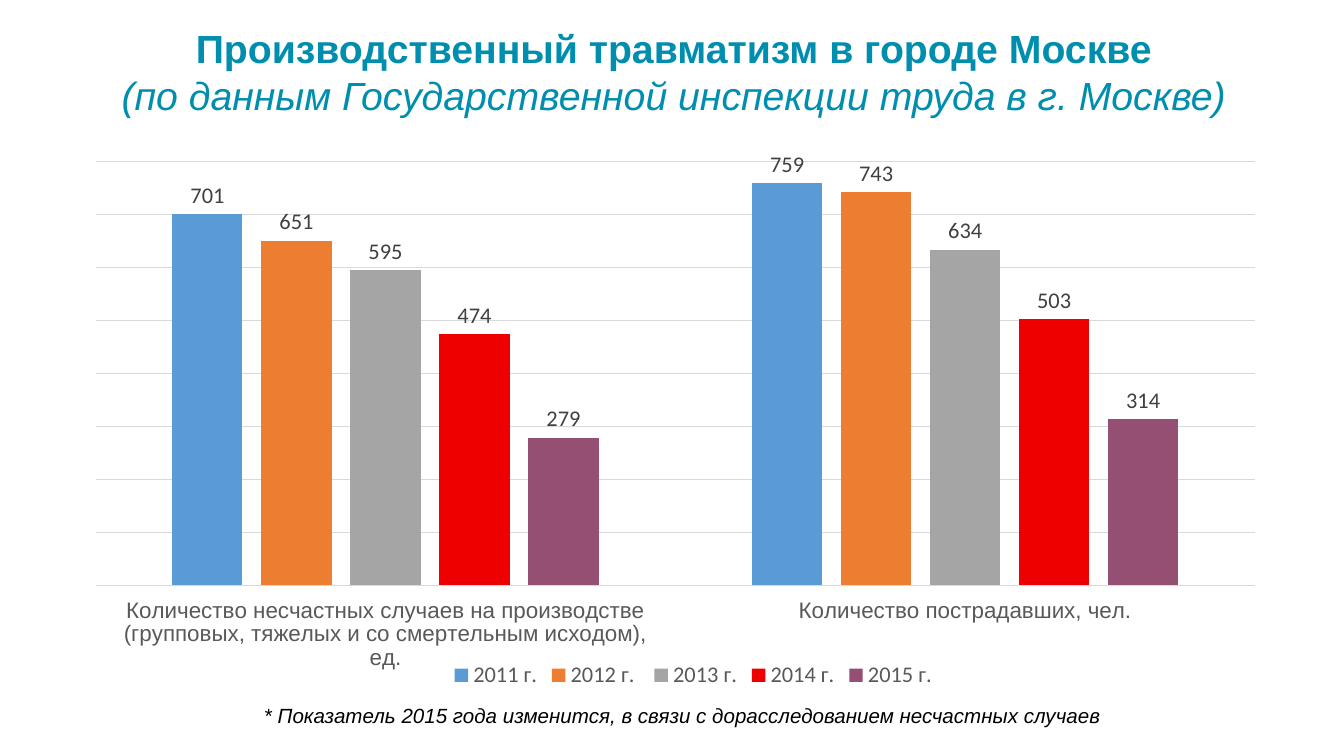
"""Build a slide on workplace injuries in Moscow, 2011 to 2015."""
from lxml import etree
from pptx import Presentation
from pptx.chart.data import CategoryChartData
from pptx.dml.color import RGBColor
from pptx.enum.chart import (XL_CHART_TYPE, XL_LABEL_POSITION, XL_LEGEND_POSITION,
                             XL_TICK_LABEL_POSITION, XL_TICK_MARK)
from pptx.enum.text import MSO_ANCHOR, MSO_AUTO_SIZE, PP_ALIGN
from pptx.oxml.ns import qn
from pptx.util import Pt

COLUMN = XL_CHART_TYPE.COLUMN_CLUSTERED
OUTSIDE = XL_LABEL_POSITION.OUTSIDE_END
BOTTOM = XL_LEGEND_POSITION.BOTTOM
LOW = XL_TICK_LABEL_POSITION.LOW
BLANK = XL_TICK_LABEL_POSITION.NONE
NO_TICK = XL_TICK_MARK.NONE
TOP = MSO_ANCHOR.TOP
NO_FIT = MSO_AUTO_SIZE.NONE
CENTER = PP_ALIGN.CENTER
LEFT = PP_ALIGN.LEFT

TEAL = RGBColor(0x00, 0x8E, 0xAF)
BLACK = RGBColor(0x00, 0x00, 0x00)
DARK = RGBColor(0x40, 0x40, 0x40)
GRAY = RGBColor(0x59, 0x59, 0x59)
PALE = RGBColor(0xD9, 0xD9, 0xD9)
BLUE = RGBColor(0x5B, 0x9B, 0xD5)
ORANGE = RGBColor(0xED, 0x7D, 0x31)
SILVER = RGBColor(0xA5, 0xA5, 0xA5)
RED = RGBColor(0xEE, 0x00, 0x00)
PLUM = RGBColor(0x95, 0x4F, 0x72)

SCALE = 9144000 / 1344


def px(*sizes):
    return [round(size * SCALE) for size in sizes]


def style(font, size, color, name="Calibri", bold=False, italic=False):
    font.name, font.size, font.bold, font.italic = name, Pt(size), bold, italic
    font.color.rgb = color


deck = Presentation()
deck.slide_width, deck.slide_height = px(1344, 756)
slide = deck.slides.add_slide(deck.slide_layouts[5])

title = slide.shapes.title
title.left, title.top, title.width, title.height = px(63, 19, 1222, 105)
note = slide.shapes.add_textbox(*px(254, 698, 866, 35))

texts = [
    (title, CENTER, 21, TEAL, [
        ("Производственный травматизм в городе Москве", True, False),
        ("(по данным Государственной инспекции труда в г. Москве)", False, True)]),
    (note, LEFT, 11, BLACK, [
        ("* Показатель 2015 года изменится, в связи с дорасследованием несчастных случаев",
         False, True)]),
]
for box, align, size, color, lines in texts:
    frame = box.text_frame
    frame.word_wrap = True
    frame.auto_size = NO_FIT
    frame.vertical_anchor = TOP
    frame.margin_left, frame.margin_right = px(10, 10)
    frame.margin_top, frame.margin_bottom = px(5, 5)
    for row, (text, bold, italic) in enumerate(lines):
        para = frame.add_paragraph() if row else frame.paragraphs[0]
        para.alignment = align
        run = para.add_run()
        run.text = text
        style(run.font, size, color, "Arial", bold, italic)

years = [
    ("2011 г.", (701, 759), BLUE),
    ("2012 г. ", (651, 743), ORANGE),
    ("2013 г.", (595, 634), SILVER),
    ("2014 г.", (474, 503), RED),
    ("2015 г.", (279, 314), PLUM),
]
data = CategoryChartData()
data.categories = [
    "Количество несчастных случаев на производстве "
    "(групповых, тяжелых и со смертельным исходом), ед.",
    "Количество пострадавших, чел.",
]
for name, counts, color in years:
    data.add_series(name, counts)

chart = slide.shapes.add_chart(COLUMN, *px(95, 151, 1196, 543), data).chart
chart.has_title = False
style(chart.font, 10, BLACK)
chart.has_legend = True
chart.legend.position = BOTTOM
chart.legend.include_in_layout = False
style(chart.legend.font, 12, GRAY)

plot = chart.plots[0]
plot.gap_width, plot.overlap = 219, -27
plot.vary_by_categories = False
for series, (name, counts, color) in zip(plot.series, years):
    series.format.fill.solid()
    series.format.fill.fore_color.rgb = color
    series.invert_if_negative = False
    labels = series.data_labels
    labels.show_value = True
    labels.position = OUTSIDE
    style(labels.font, 12, DARK)

groups, scale = chart.category_axis, chart.value_axis
for axis, face in ((groups, "Arial"), (scale, "Calibri")):
    axis.major_tick_mark = axis.minor_tick_mark = NO_TICK
    style(axis.tick_labels.font, 12, GRAY, face)
groups.tick_label_position = LOW
scale.tick_label_position = BLANK
scale.minimum_scale, scale.maximum_scale, scale.major_unit = 0, 800, 100
scale.format.line.fill.background()
scale.has_major_gridlines = True
for line in (groups.format.line, scale.major_gridlines.format.line):
    line.width = Pt(0.75)
    line.color.rgb = PALE

area = chart._chartSpace.chart.plotArea
for old in area.findall(qn("c:layout")):
    area.remove(old)
layout = etree.Element(qn("c:layout"))
area.insert(0, layout)
manual = etree.SubElement(layout, qn("c:manualLayout"))
for tag, value in (("layoutTarget", "inner"), ("xMode", "edge"), ("yMode", "edge"),
                   ("x", 0), ("y", 0.02), ("w", 0.97), ("h", 0.78)):
    etree.SubElement(manual, qn("c:" + tag)).set("val", str(value))

deck.save("out.pptx")
